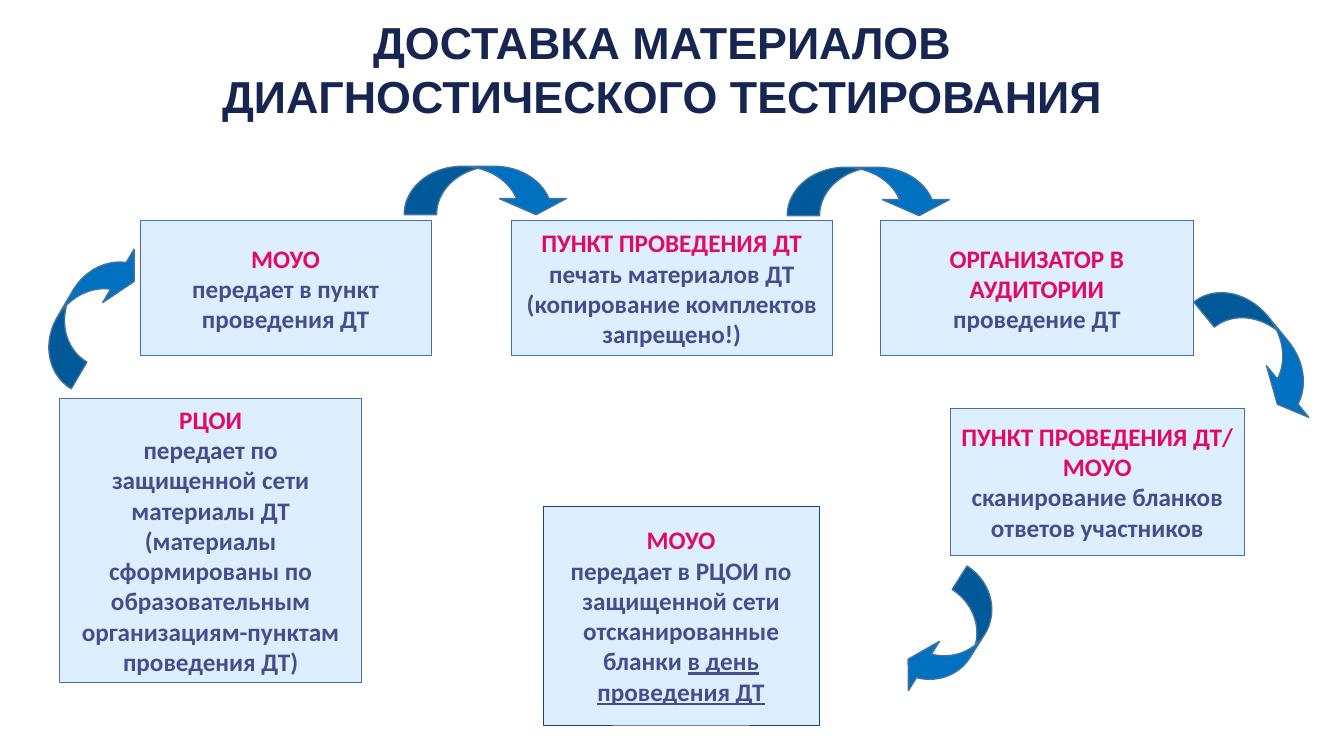
from dataclasses import dataclass

from lxml.etree import SubElement
from pptx import Presentation
from pptx.dml.color import RGBColor
from pptx.enum.shapes import MSO_SHAPE
from pptx.enum.text import MSO_ANCHOR, MSO_AUTO_SIZE, PP_ALIGN
from pptx.oxml.ns import qn
from pptx.slide import Slide
from pptx.text.text import Font
from pptx.util import Pt


@dataclass(frozen=True)
class Theme:
    title: str = "172551"
    head: str = "E30967"
    body: str = "464D8A"
    box: str = "99CCFF"
    alpha: int = 33
    edge: str = "496DA7"
    dark: str = "1B4089"
    arrow: str = "0070C0"
    rim: str = "43729D"
    big: int = 32
    size: int = 18
    big_font: str = "Arial"
    font: str = "Calibri"


@dataclass(frozen=True)
class Step:
    left: float
    top: float
    width: float
    height: float
    lines: tuple[str, ...]
    tail: str = ""
    edge: str = Theme.edge
    inset: float = 7.2


@dataclass(frozen=True)
class Arrow:
    left: float
    top: float
    width: float = 118
    height: float = 34.5
    turn: float = 0
    bends: tuple[float, float, float] = (0.67, 1.38, 0.33)


THEME = Theme()
ROW, TALL = 157.7, 96.5

STEPS = (
    Step(42.5, 284.4, 216, 203,
         ("РЦОИ", "передает по защищенной сети материалы ДТ",
          "(материалы сформированы по образовательным "
          "организациям-пунктам проведения ДТ)"), inset=10),
    Step(100, ROW, 208, TALL, ("МОУО", "передает в пункт проведения ДТ")),
    Step(365, ROW, 229.7, TALL,
         ("ПУНКТ ПРОВЕДЕНИЯ ДТ",
          "печать материалов ДТ (копирование комплектов запрещено!)")),
    Step(628.5, ROW, 224.2, TALL,
         ("ОРГАНИЗАТОР В АУДИТОРИИ", "проведение ДТ")),
    Step(679, 291.6, 209.5, 105,
         ("ПУНКТ ПРОВЕДЕНИЯ ДТ/ МОУО", "сканирование бланков ответов участников")),
    Step(388, 361.4, 197, 156.5,
         ("МОУО", "передает в РЦОИ по защищенной сети отсканированные бланки "),
         tail="в день проведения ДТ", edge=THEME.dark),
)

ARROWS = (
    Arrow(8.6, 203.8, width=111, turn=300.4, bends=(0.64, 1.28, 0.34)),
    Arrow(288.7, 118.8),
    Arrow(562.3, 119.5),
    Arrow(844.5, 233.3, turn=50.7),
    Arrow(630, 437.8, 99.4, 36.7, 122.3, (0.54, 1.13, 0.33)),
)


def style(font: Font, name: str, size: float, color: str) -> None:
    font.name = name
    font.size = Pt(size)
    font.bold = True
    font.color.rgb = RGBColor.from_string(color)


def add_title(slide: Slide, text: str) -> None:
    title = slide.shapes.title
    title.left, title.top = Pt(14.4), Pt(7.2)
    title.width, title.height = Pt(917.3), Pt(85)
    frame = title.text_frame
    frame.text = text
    frame.word_wrap = True
    frame.auto_size = MSO_AUTO_SIZE.NONE
    frame.vertical_anchor = MSO_ANCHOR.TOP
    for line in frame.paragraphs:
        line.alignment = PP_ALIGN.CENTER
        for run in line.runs:
            style(run.font, THEME.big_font, THEME.big, THEME.title)


def add_step(slide: Slide, step: Step) -> None:
    box = slide.shapes.add_shape(
        MSO_SHAPE.RECTANGLE,
        Pt(step.left), Pt(step.top), Pt(step.width), Pt(step.height))
    box.shadow.inherit = False
    box.fill.solid()
    box.fill.fore_color.rgb = RGBColor.from_string(THEME.box)
    tint = box._element.spPr.find(qn("a:solidFill"))[0]
    SubElement(tint, qn("a:alpha")).set("val", str(THEME.alpha * 1000))
    box.line.color.rgb = RGBColor.from_string(step.edge)
    box.line.width = Pt(0.5)
    frame = box.text_frame
    frame.text = "\n".join(step.lines)
    frame.word_wrap = True
    frame.vertical_anchor = MSO_ANCHOR.MIDDLE
    frame.margin_left = frame.margin_right = Pt(step.inset)
    if step.tail:
        end = frame.paragraphs[-1].add_run()
        end.text = step.tail
        end.font.underline = True
    for rank, line in enumerate(frame.paragraphs):
        line.alignment = PP_ALIGN.CENTER
        for run in line.runs:
            style(run.font, THEME.font, THEME.size,
                  THEME.body if rank else THEME.head)


def add_arrow(slide: Slide, arrow: Arrow) -> None:
    shape = slide.shapes.add_shape(
        MSO_SHAPE.CURVED_DOWN_ARROW,
        Pt(arrow.left), Pt(arrow.top), Pt(arrow.width), Pt(arrow.height))
    shape.shadow.inherit = False
    shape.rotation = arrow.turn
    for index, bend in enumerate(arrow.bends):
        shape.adjustments[index] = bend
    shape.fill.solid()
    shape.fill.fore_color.rgb = RGBColor.from_string(THEME.arrow)
    shape.line.color.rgb = RGBColor.from_string(THEME.rim)
    shape.line.width = Pt(1)


def main() -> None:
    deck = Presentation()
    deck.slide_width, deck.slide_height = Pt(960), Pt(540)
    slide = deck.slides.add_slide(deck.slide_layouts.get_by_name("Title Only"))
    add_title(slide, "ДОСТАВКА МАТЕРИАЛОВ\nДИАГНОСТИЧЕСКОГО ТЕСТИРОВАНИЯ")
    for step in STEPS:
        add_step(slide, step)
    for arrow in ARROWS:
        add_arrow(slide, arrow)
    deck.save("out.pptx")


if __name__ == "__main__":
    main()
